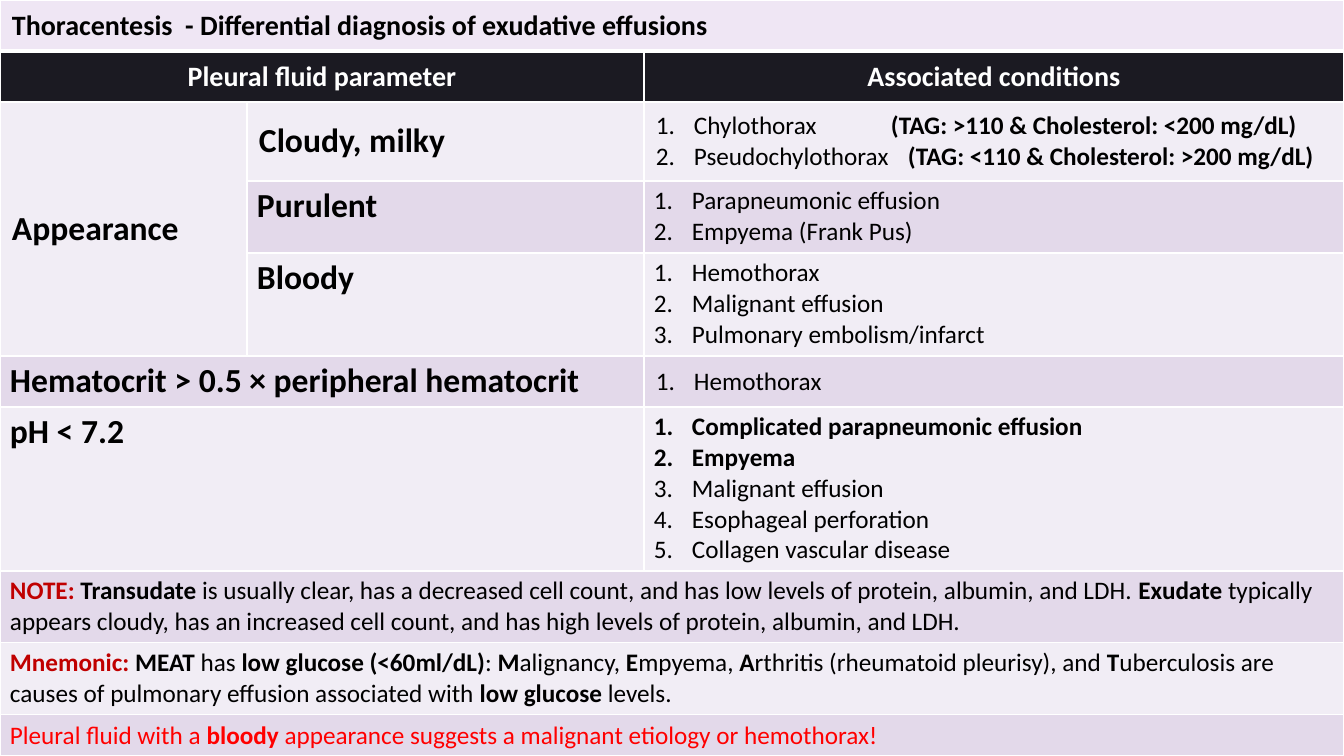
from pptx import Presentation
from pptx import util as u
from pptx.dml.color import RGBColor
from pptx.enum import text as t
from pptx.oxml import parse_xml
from pptx.oxml.ns import nsdecls

PX = 12192000 / 1344
WHITE = RGBColor(0xFF, 0xFF, 0xFF)
BLACK = RGBColor(0, 0, 0)
DARK = RGBColor(0x1B, 0x1A, 0x22)
TITLE = RGBColor(0xEF, 0xE6, 0xF4)
PALE = RGBColor(0xF1, 0xED, 0xF5)
LILAC = RGBColor(0xE3, 0xD9, 0xEA)
CRIMSON = RGBColor(0xC0, 0, 0)
RED = RGBColor(0xFF, 0, 0)

COLS = [247, 397, 700]
ROWS = [51, 51, 79, 72, 103, 51, 164, 72, 72, 41]
FILLS = [TITLE, DARK] + [PALE, LILAC] * 4
MERGES = [(0, 0, 0, 2), (1, 0, 1, 1), (2, 0, 4, 0), (5, 0, 5, 1),
          (6, 0, 6, 1), (7, 0, 7, 2), (8, 0, 8, 2), (9, 0, 9, 2)]

# Cell formats
WIDE = {"margin_left": 12, "margin_right": 12, "margin_top": 8, "margin_bottom": 8}
SLIM = {"margin_left": 10, "margin_right": 10, "margin_top": 5, "margin_bottom": 5}
MID = {"anchor": t.MSO_ANCHOR.MIDDLE}
HEAD = {"size": 20, "color": WHITE, "align": t.PP_ALIGN.CENTER}
LABEL = {"size": 24}
LIST = {"size": 18, "number": True}
NOTE = {"size": 18, "lead": CRIMSON}

# Row, column, lines (asterisks toggle bold), format
CELLS = [
    (0, 0, ["*Thoracentesis  - Differential diagnosis of exudative effusions*"],
     {"size": 20, **WIDE, **MID}),
    (1, 0, ["*Pleural fluid parameter*"], {**HEAD, **MID}),
    (1, 2, ["*Associated conditions*"], {**HEAD, **WIDE, **MID}),
    (2, 0, ["*Appearance*"], {**LABEL, **WIDE, **MID}),
    (2, 1, ["*Cloudy, milky*"], {**LABEL, **WIDE, **MID}),
    (2, 2, ["Chylothorax\t*(TAG: >110 & Cholesterol: <200 mg/dL)*",
            "Pseudochylothorax\t*(TAG: <110 & Cholesterol: >200 mg/dL)*"],
     {**LIST, **WIDE, **MID, "tabs": [235, 252]}),
    (3, 1, ["*Purulent*"], LABEL),
    (3, 2, ["Parapneumonic effusion", "Empyema (Frank Pus)"], LIST),
    (4, 1, ["*Bloody*"], LABEL),
    (4, 2, ["Hemothorax", "Malignant effusion", "Pulmonary embolism/infarct"], LIST),
    (5, 0, ["*Hematocrit > 0.5 × peripheral hematocrit*"], LABEL),
    (5, 2, ["Hemothorax"], {**LIST, **WIDE, **MID}),
    (6, 0, ["*pH < 7.2*"], LABEL),
    (6, 2, ["*Complicated parapneumonic effusion*", "*Empyema*", "Malignant effusion",
            "Esophageal perforation", "Collagen vascular disease"], LIST),
    (7, 0, ["*NOTE: **Transudate* is usually clear, has a decreased cell count, and has "
            "low levels of protein, albumin, and LDH. *Exudate* typically appears cloudy, "
            "has an increased cell count, and has high levels of protein, albumin, and LDH."],
     NOTE),
    (8, 0, ["*Mnemonic: **MEAT* has *low glucose (<60ml/dL)*: *M*alignancy, *E*mpyema, "
            "*A*rthritis (rheumatoid pleurisy), and *T*uberculosis are causes of pulmonary "
            "effusion associated with *low glucose* levels."], NOTE),
    (9, 0, ["Pleural fluid with a *bloody* appearance suggests a malignant etiology "
            "or hemothorax!"], {"size": 18, "color": RED, **MID}),
]


def px(n):
    return u.Emu(round(n * PX))


def edge(cell, row):
    """White borders, thicker under the title and above the header."""
    heavy = {0: "B", 1: "T"}.get(row)
    for i, side in enumerate("LRTB"):
        wide = u.Pt(3 if side == heavy else 1)
        cell._tc.get_or_add_tcPr().insert(i, parse_xml(
            f'<a:ln{side} {nsdecls("a")} w="{wide}"><a:solidFill>'
            f'<a:srgbClr val="{WHITE}"/></a:solidFill></a:ln{side}>'))


def number(para, tab):
    """Hanging number, with a tab stop when one is given."""
    props = para._p.get_or_add_pPr()
    props.set("marL", str(px(38)))
    props.set("indent", str(-px(38)))
    props.append(parse_xml(f'<a:buAutoNum {nsdecls("a")} type="arabicPeriod"/>'))
    if tab:
        props.append(parse_xml(f'<a:tabLst {nsdecls("a")}>'
                               f'<a:tab pos="{px(tab)}" algn="l"/></a:tabLst>'))


def write(cell, lines, form):
    for key in SLIM:
        setattr(cell, key, px(form.get(key, SLIM[key])))
    cell.vertical_anchor = form.get("anchor", t.MSO_ANCHOR.TOP)
    frame = cell.text_frame
    for i, line in enumerate(lines):
        para = frame.paragraphs[0] if i == 0 else frame.add_paragraph()
        para.alignment = form.get("align", t.PP_ALIGN.LEFT)
        if form.get("number"):
            number(para, form["tabs"][i] if "tabs" in form else None)
        tint = form.get("lead")
        for j, part in enumerate(line.split("*")):
            if not part:
                continue
            run = para.add_run()
            run.text = part
            look = {"name": "Calibri", "size": u.Pt(form["size"]), "bold": j % 2 == 1}
            for key, value in look.items():
                setattr(run.font, key, value)
            run.font.color.rgb = tint or form.get("color", BLACK)
            tint = None


def chart(slide, x, y, w, h):
    """Table of fluid findings, filling the given box."""
    grid = slide.shapes.add_table(len(ROWS), len(COLS), px(x), px(y), px(w), px(h)).table
    for col, size in zip(grid.columns, COLS):
        col.width = px(size * w / sum(COLS))
    for row, size in zip(grid.rows, ROWS):
        row.height = px(size * h / sum(ROWS))
    # Fills and borders
    for r, fill in enumerate(FILLS):
        for c in range(len(COLS)):
            cell = grid.cell(r, c)
            tone = PALE if c == 0 and 2 <= r <= 4 else fill
            cell.fill.solid()
            cell.fill.fore_color.rgb = tone
            edge(cell, r)
    # Merged areas
    for top, left, low, right in MERGES:
        grid.cell(top, left).merge(grid.cell(low, right))
    # Wording
    for r, c, lines, form in CELLS:
        write(grid.cell(r, c), lines, form)


def main():
    deck = Presentation()
    deck.slide_width, deck.slide_height = px(1344), px(756)
    slide = deck.slides.add_slide(deck.slide_layouts[6])
    chart(slide, 0, 0, 1344, 756)
    deck.save("out.pptx")


if __name__ == "__main__":
    main()
